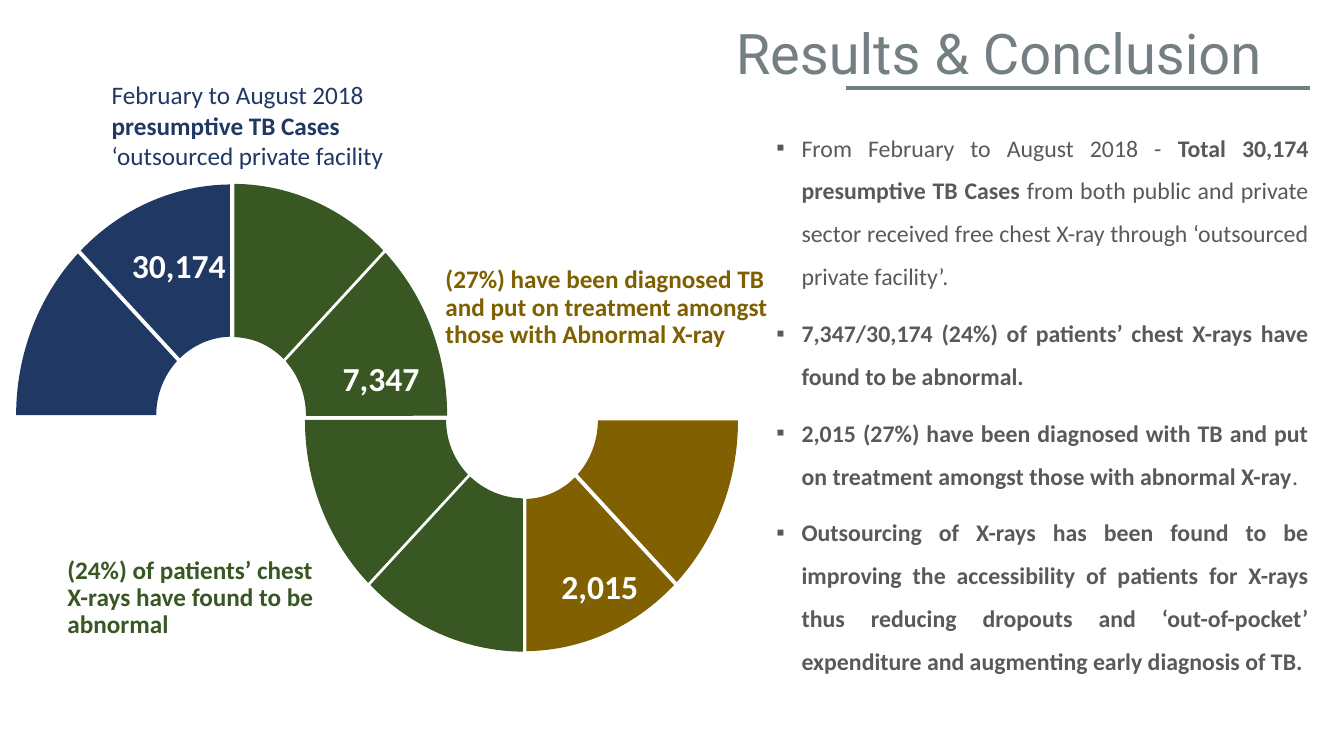
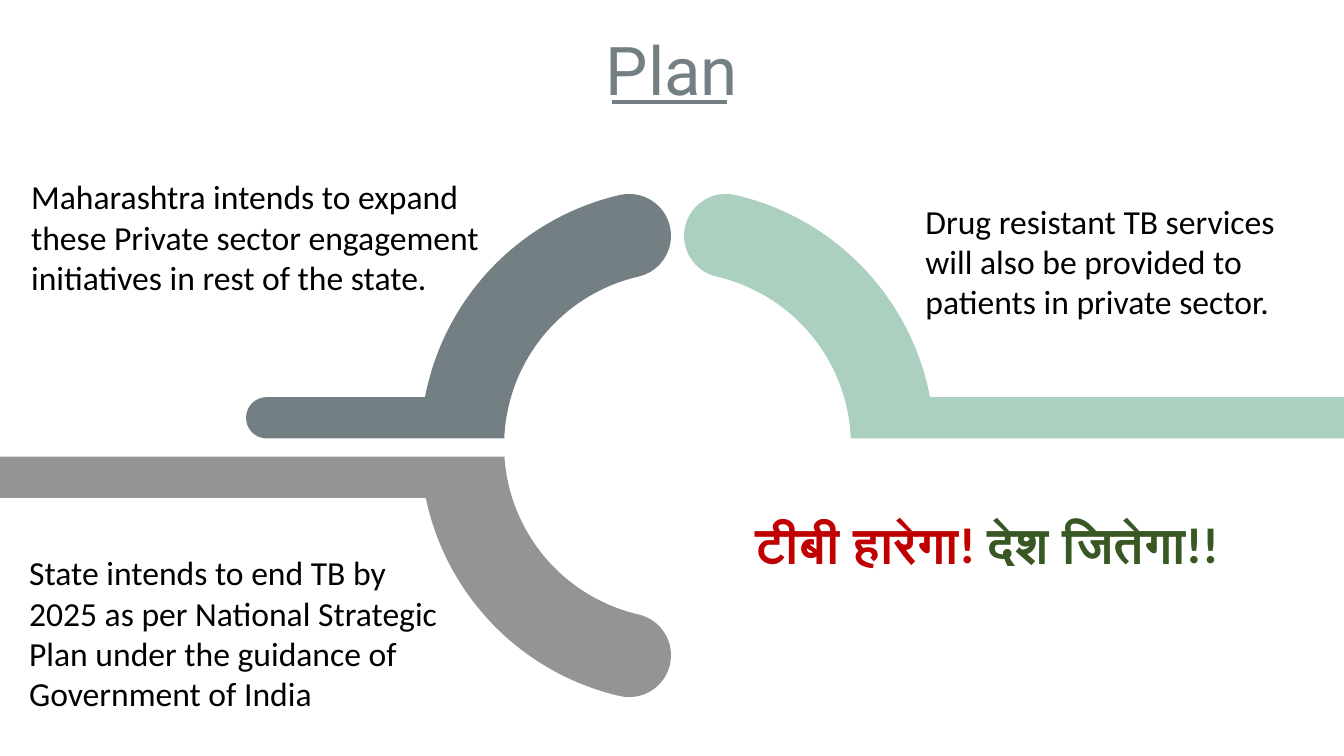
"""Build the two closing slides on TB results and the plan ahead."""
from math import asin, ceil, cos, degrees, radians, sin, tan

from lxml.etree import SubElement
from pptx import Presentation
from pptx.dml.color import RGBColor
from pptx.enum.shapes import MSO_CONNECTOR
from pptx.enum.text import MSO_ANCHOR, MSO_AUTO_SIZE, PP_ALIGN as ALIGN
from pptx.oxml.ns import qn
from pptx.util import Inches, Pt

SLATE = RGBColor(0x74, 0x7F, 0x83)
NAVY = RGBColor(0x20, 0x38, 0x64)
GREEN = RGBColor(0x38, 0x57, 0x23)
GOLD = RGBColor(0x80, 0x60, 0x00)
GOLD_TEXT = RGBColor(0x7F, 0x60, 0x00)
MINT = RGBColor(0xAB, 0xD0, 0xBF)
GREY = RGBColor(0x94, 0x94, 0x94)
BODY_GREY = RGBColor(0x59, 0x59, 0x59)
RED = RGBColor(0xC0, 0x00, 0x00)
BLACK = RGBColor(0x00, 0x00, 0x00)
WHITE = RGBColor(0xFF, 0xFF, 0xFF)

TITLE_FONT, TEXT_FONT = "Roboto", "Calibri"
CONTENT_LAYOUT, TITLE_LAYOUT = 1, 5

WEDGE_HEIGHTS = (2.29, 0.78)
WEDGE_PAIRS = [
    ((2.3, 4.12), (2.14, 0.75), 180, 0.02, NAVY),
    ((2.31, 4.12), (2.12, 0.73), 270, 0.02, GREEN),
    ((5.2, 4.17), (2.12, 0.73), 0, 0.02, GOLD),
    ((5.2, 4.17), (2.17, 0.78), 90, 0.02, GREEN),
]

RING_CENTER = (6.72, 4.42)
RING_OUTER, RING_INNER = 2.55, 1.72
CAP_ANGLE = 77

BULLETS = [
    [("From February to August 2018 - ", False),
     ("Total 30,174 presumptive TB Cases", True),
     (" from both public and private sector received free chest X-ray "
      "through ‘outsourced private facility’.", False)],
    [("7,347/30,174 (24%) of patients’ chest X-rays have found to be abnormal.", True)],
    [("2,015 (27%) have been diagnosed with TB and put on treatment amongst "
      "those with abnormal X-ray", True), (". ", False)],
    [("Outsourcing of X-rays has been found to be improving the accessibility "
      "of patients for X-rays thus reducing dropouts and ‘out-of-pocket’ "
      "expenditure and augmenting early diagnosis of TB.", True)],
]


def place(shape, left, top, width, height):
    """Move and size a shape in inches."""
    shape.left, shape.top = Inches(left), Inches(top)
    shape.width, shape.height = Inches(width), Inches(height)


def add_span(para, text, size, color, bold=False, font=TEXT_FONT):
    """Append one formatted run."""
    span = para.add_run()
    span.text = text
    span.font.name = font
    span.font.size = Pt(size)
    span.font.bold = bold
    span.font.color.rgb = color


def next_para(frame, index):
    """Return the first paragraph, or a new one after it."""
    return frame.add_paragraph() if index else frame.paragraphs[0]


def set_title(page, text, at, size, align, rule):
    """Fill the title placeholder and draw its rule, given as left, right and height."""
    title = page.shapes.title
    place(title, *at)
    title.text_frame.auto_size = MSO_AUTO_SIZE.NONE
    title.text_frame.vertical_anchor = MSO_ANCHOR.MIDDLE
    para = title.text_frame.paragraphs[0]
    para.alignment = align
    add_span(para, text, size, SLATE, font=TITLE_FONT)
    left, right, level = rule
    line = page.shapes.add_connector(
        MSO_CONNECTOR.STRAIGHT, Inches(left), Inches(level), Inches(right), Inches(level))
    line.line.color.rgb = SLATE
    line.line.width = Pt(3)
    SubElement(line._element.spPr, qn("a:effectLst"))


def add_text(page, at, paragraphs, size, align=ALIGN.LEFT, wrap=True, tight=False):
    """Add a text box whose paragraphs are lists of text, colour and bold."""
    box = page.shapes.add_textbox(*(Inches(value) for value in at))
    box.text_frame.word_wrap = wrap
    for index, spans in enumerate(paragraphs):
        para = next_para(box.text_frame, index)
        para.alignment = align
        if tight:
            para.line_spacing, para.space_before = 0.9, Pt(10)
        for text, color, bold in spans:
            add_span(para, text, size, color, bold)


def fill_bullets(body, at, items):
    """Write justified square-bulleted paragraphs into the body placeholder."""
    place(body, *at)
    frame = body.text_frame
    frame.auto_size = MSO_AUTO_SIZE.NONE
    for index, spans in enumerate(items):
        para = next_para(frame, index)
        para.alignment = ALIGN.JUSTIFY
        para.line_spacing, para.space_before = 1.5, Pt(10)
        properties = para._p.get_or_add_pPr()
        properties.set("marL", str(Inches(0.25)))
        properties.set("indent", str(Inches(-0.25)))
        SubElement(properties, qn("a:buFont"), typeface="Arial")
        SubElement(properties, qn("a:buChar"), char="▪")
        for text, bold in spans:
            add_span(para, text, 17, BODY_GREY, bold)


def arc(center, radii, start, end):
    """Return a start point and Bezier steps along an ellipse, in degrees."""
    count = ceil(abs(end - start) / 90)
    sweep = radians(end - start) / count
    pull = 4 / 3 * tan(sweep / 4)

    def at(angle, bend=0):
        return (center[0] + radii[0] * (cos(angle) - bend * sin(angle)),
                center[1] + radii[1] * (sin(angle) + bend * cos(angle)))

    steps = [[at(radians(start))]]
    for index in range(count):
        first = radians(start) + sweep * index
        last = first + sweep
        steps.append([at(first, pull), at(last, -pull), at(last)])
    return steps


def add_outline(page, steps, color, outlined=False):
    """Add a closed outline; a step of one point is a line, of three a Bezier curve."""
    corners = [(Inches(x), Inches(y)) for step in steps for x, y in step]
    builder = page.shapes.build_freeform(*corners[0])
    builder.add_line_segments(corners[1:], close=True)
    shape = builder.convert_to_shape()
    lines = iter(list(shape._element.iter(qn("a:lnTo"))))
    for step in steps[1:]:
        segments = [next(lines) for _ in step]
        if len(segments) == 3:
            segments[0].addprevious(curve := SubElement(segments[0].getparent(),
                                                        qn("a:cubicBezTo")))
            for segment in segments:
                curve.append(segment[0])
                segment.getparent().remove(segment)
    shape.shadow.inherit = False
    shape.fill.solid()
    shape.fill.fore_color.rgb = color
    if outlined:
        shape.line.color.rgb = color
        shape.line.width = Pt(0.75)
    else:
        shape.line.fill.background()


def add_wedge(page, center, widths, start, gap, color):
    """Add an eighth of an arch, trimmed evenly along its inner joints."""
    def edge(radii, backwards):
        trim = degrees(asin(gap / radii[0]))
        first, last = (angle + side * trim * (angle % 180 != 0)
                       for angle, side in ((start, 1), (start + 45, -1)))
        return arc(center, radii, *((last, first) if backwards else (first, last)))

    outer, inner = zip(widths, WEDGE_HEIGHTS)
    add_outline(page, edge(outer, False) + edge(inner, True), color,
                outlined=color == GREEN)


def add_arm(page, side, rise, near, bar_end, color, rounded=False):
    """Add a capped quarter ring running into a bar; side and rise are 1 or -1."""
    far = near + 0.41
    reach = abs(bar_end - RING_CENTER[0])
    cap_radius = (RING_OUTER - RING_INNER) / 2
    middle = RING_INNER + cap_radius
    cap_center = (middle * cos(radians(CAP_ANGLE)), middle * sin(radians(CAP_ANGLE)))
    if rounded:
        radius = (far - near) / 2
        tip = arc((reach - radius, near + radius), (radius, radius), 90, -90)
    else:
        tip = [[(reach, far)], [(reach, near)]]
    steps = (
        arc((0, 0), (RING_OUTER, RING_OUTER), CAP_ANGLE, degrees(asin(far / RING_OUTER)))
        + tip
        + arc((0, 0), (RING_INNER, RING_INNER), degrees(asin(near / RING_INNER)), CAP_ANGLE)
        + arc(cap_center, (cap_radius, cap_radius), CAP_ANGLE + 180, CAP_ANGLE)[1:])
    add_outline(page, [[(RING_CENTER[0] + side * x, RING_CENTER[1] - rise * y)
                        for x, y in step] for step in steps], color)


def build_results(deck):
    """Build the results slide."""
    page = deck.slides.add_slide(deck.slide_layouts[CONTENT_LAYOUT])
    set_title(page, "Results & Conclusion", (6.9, 0.13, 5.71, 0.77), 40,
              ALIGN.RIGHT, (8.39, 12.99, 0.87))
    for center, widths, start, gap, color in WEDGE_PAIRS:
        for angle in (start, start + 45):
            add_wedge(page, center, widths, angle, gap, color)
    add_text(page, (1.01, 0.74, 3.21, 1.09),
             [[("February to August 2018", NAVY, False)],
              [("presumptive TB Cases ", NAVY, True),
               ("‘outsourced private facility", NAVY, False)]], 18)
    for at, text, color in (
            ((0.57, 5.48, 2.88, 0.77),
             "(24%) of patients’ chest X-rays have found to be abnormal", GREEN),
            ((4.32, 2.6, 3.43, 0.77),
             "(27%) have been diagnosed TB and put on treatment amongst "
             "those with Abnormal X-ray", GOLD_TEXT)):
        add_text(page, at, [[(text, color, True)]], 18, tight=True)
    for left, top, width, text in ((1.21, 2.38, 1.14, "30,174"),
                                   (3.3, 3.5, 0.97, "7,347"),
                                   (5.47, 5.57, 0.97, "2,015")):
        add_text(page, (left, top, width, 0.5), [[(text, WHITE, True)]], 24, wrap=False)
    fill_bullets(page.placeholders[1], (7.6, 1.13, 5.48, 5.96), BULLETS)


def build_plan(deck):
    """Build the plan slide."""
    page = deck.slides.add_slide(deck.slide_layouts[TITLE_LAYOUT])
    add_arm(page, 1, 1, 0.07, 13.33, MINT)
    add_arm(page, -1, -1, 0.11, 0, GREY)
    add_arm(page, -1, 1, 0.07, 2.44, SLATE, rounded=True)
    set_title(page, "Plan", (3.81, 0.23, 5.71, 0.91), 48, ALIGN.CENTER, (6.07, 7.21, 1.01))
    for at, lines in (
            ((0.21, 1.7, 4.85, 1.31),
             ["Maharashtra intends to expand these Private sector engagement "
              "initiatives in rest of the state."]),
            ((9.08, 1.94, 4.09, 1.31),
             ["Drug resistant TB services will also be provided to patients "
              "in private sector."]),
            ((0.19, 5.43, 4.51, 1.72),
             ["State intends to end TB by",
              "2025 as per National Strategic Plan under the guidance of "
              "Government of India"])):
        add_text(page, at, [[(line, BLACK, False)] for line in lines], 24)
    add_text(page, (6.41, 5.04, 6.76, 0.71),
             [[("टीबी हारेगा! ", RED, True), ("देश जितेगा!!", GREEN, True)]],
             36, align=ALIGN.CENTER)


def main():
    """Build and save the deck."""
    deck = Presentation()
    deck.slide_width, deck.slide_height = Inches(13.33), Inches(7.5)
    build_results(deck)
    build_plan(deck)
    deck.save("out.pptx")


if __name__ == "__main__":
    main()
